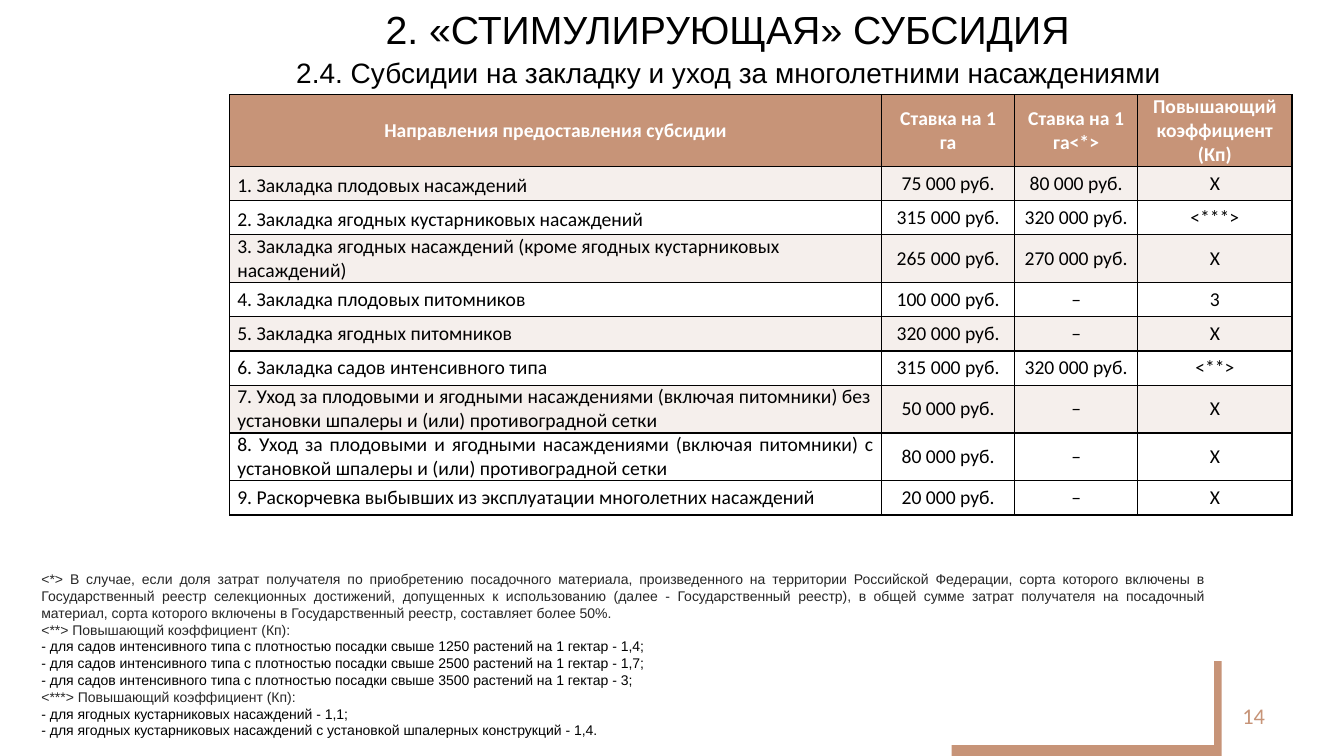
from dataclasses import dataclass
from typing import Any, NamedTuple

from lxml import etree
from pptx import Presentation, util as u
from pptx.dml.color import RGBColor
from pptx.enum import shapes, text
from pptx.oxml import ns

ALIGN = text.PP_ALIGN
MID = text.MSO_ANCHOR.MIDDLE
TOP = text.MSO_ANCHOR.TOP


@dataclass(frozen=True)
class Theme:
    clay: str = "C79478"
    sand: str = "F5EFEC"
    white: str = "FFFFFF"
    black: str = "000000"
    gray: str = "262626"
    head: str = "Arial"
    body: str = "Calibri"
    title: int = 28
    sub: int = 20
    num: int = 16
    cell: int = 14
    note: int = 10


class Box(NamedTuple):
    left: float
    top: float
    width: float
    height: float


class Row(NamedTuple):
    name: str
    rate: str
    local: str
    coef: str
    tall: float = 0.85
    lead: float = 1.0
    align: Any = ALIGN.LEFT


class Note(NamedTuple):
    words: str
    color: str
    align: Any = ALIGN.LEFT


T = Theme()
SLIDE = (33.87, 19.05)
TITLE = Box(8.43, 0, 19.81, 1.45)
SUB = Box(5.26, 1.27, 26.21, 1.12)
GRID = Box(5.79, 2.39, 26.77, 10.41)
NOTES = Box(0.79, 14.25, 29.8, 4.52)
CORNER = Box(23.98, 16.66, 6.81, 2.39)
NUMBER = Box(24.51, 17.53, 7.62, 1.02)
COLS = (16.43, 3.35, 3.1, 3.89)
TALL = 1.19

ROWS = [
    Row("Направления предоставления субсидии", "Ставка на 1 га", "Ставка на 1 га<*>",
        "Повышающий коэффициент (Кп)", 1.79, align=ALIGN.CENTER),
    Row("1. Закладка плодовых насаждений", "75 000 руб.", "80 000 руб.", "Х", lead=1.15),
    Row("2. Закладка ягодных кустарниковых насаждений", "315 000 руб.", "320 000 руб.",
        "<***>", lead=1.15),
    Row("3. Закладка ягодных насаждений (кроме ягодных кустарниковых насаждений)",
        "265 000 руб.", "270 000 руб.", "Х", TALL),
    Row("4. Закладка плодовых питомников", "100 000 руб.", "–", "3"),
    Row("5. Закладка ягодных питомников", "320 000 руб.", "–", "Х"),
    Row("6. Закладка садов интенсивного типа", "315 000 руб.", "320 000 руб.", "<**>"),
    Row("7. Уход за плодовыми и ягодными насаждениями (включая питомники) без установки "
        "шпалеры и (или) противоградной сетки", "50 000 руб.", "–", "Х", TALL),
    Row("8. Уход за плодовыми и ягодными насаждениями (включая питомники) с установкой "
        "шпалеры и (или) противоградной сетки", "80 000 руб.", "–", "Х", TALL,
        align=ALIGN.JUSTIFY),
    Row("9. Раскорчевка выбывших из эксплуатации многолетних насаждений",
        "20 000 руб.", "–", "Х", align=ALIGN.JUSTIFY),
]
FILLS = [T.clay] + [T.sand, T.white] * 4 + [T.white]

LINES = [
    Note("<*> В случае, если доля затрат получателя по приобретению посадочного материала, "
         "произведенного на территории Российской Федерации, сорта которого включены в "
         "Государственный реестр селекционных достижений, допущенных к использованию (далее - "
         "Государственный реестр), в общей сумме затрат получателя на посадочный материал, "
         "сорта которого включены в Государственный реестр, составляет более 50%.",
         T.gray, ALIGN.JUSTIFY),
    Note("<**> Повышающий коэффициент (Кп):", T.gray, ALIGN.JUSTIFY),
    Note("- для садов интенсивного типа с плотностью посадки свыше 1250 растений на 1 гектар - 1,4;",
         T.black),
    Note("- для садов интенсивного типа с плотностью посадки свыше 2500 растений на 1 гектар - 1,7;",
         T.black),
    Note("- для садов интенсивного типа с плотностью посадки свыше 3500 растений на 1 гектар - 3;",
         T.black),
    Note("<***> Повышающий коэффициент (Кп):", T.gray),
    Note("- для ягодных кустарниковых насаждений - 1,1;", T.black),
    Note("- для ягодных кустарниковых насаждений с установкой шпалерных конструкций - 1,4.",
         T.black),
]


def assign(item: Any, form: dict[str, Any]) -> None:
    for key, val in form.items():
        setattr(item, key, val)


def paint(fill: Any, color: str) -> None:
    fill.solid()
    fill.fore_color.rgb = RGBColor.from_string(color)


def place(shape: Any, box: Box) -> None:
    assign(shape, {key: u.Cm(val) for key, val in box._asdict().items()})


def write(para: Any, words: str, size: int, face: str, color: str,
          align: Any = ALIGN.CENTER, bold: bool = False, lead: float = 1.0) -> None:
    para.text = words
    assign(para, {"alignment": align, "line_spacing": lead, "space_before": u.Pt(0)})
    assign(para.font, {"size": u.Pt(size), "name": face, "bold": bold})
    para.font.color.rgb = RGBColor.from_string(color)


def setup(frame: Any, anchor: Any = TOP) -> None:
    assign(frame, {"word_wrap": True, "auto_size": text.MSO_AUTO_SIZE.NONE,
                   "vertical_anchor": anchor})


def label(slide: Any, box: Box, words: str, size: int, face: str, color: str,
          align: Any = ALIGN.CENTER, anchor: Any = TOP) -> None:
    shape = slide.shapes.add_textbox(*map(u.Cm, box))
    setup(shape.text_frame, anchor)
    write(shape.text_frame.paragraphs[0], words, size, face, color, align)


def border(cell: Any) -> None:
    props = cell._tc.get_or_add_tcPr()
    for spot, side in enumerate(("lnL", "lnR", "lnT", "lnB")):
        line = etree.Element(ns.qn("a:" + side), w=str(u.Pt(1)))
        fill = etree.SubElement(line, ns.qn("a:solidFill"))
        etree.SubElement(fill, ns.qn("a:srgbClr"), val=T.black)
        props.insert(spot, line)


def corner(slide: Any) -> None:
    shape = slide.shapes.add_shape(shapes.MSO_SHAPE.RECTANGLE, *map(u.Cm, CORNER))
    shape.shadow.inherit = False
    paint(shape.fill, T.clay)
    shape.line.fill.background()


def notes(slide: Any) -> None:
    body = slide.placeholders[1]
    slide.shapes.element.append(body.element)
    place(body, NOTES)
    paint(body.fill, T.white)
    frame = body.text_frame
    setup(frame)
    for spot, note in enumerate(LINES):
        para = frame.add_paragraph() if spot else frame.paragraphs[0]
        props = para._p.get_or_add_pPr()
        assign_xml = {"marL": "0", "indent": "0"}
        for key, val in assign_xml.items():
            props.set(key, val)
        etree.SubElement(props, ns.qn("a:buNone"))
        write(para, note.words, T.note, T.head, note.color, note.align)


def grid(slide: Any) -> None:
    table = slide.shapes.add_table(len(ROWS), len(COLS), *map(u.Cm, GRID)).table
    for col, width in zip(table.columns, COLS):
        col.width = u.Cm(width)
    for y, (row, fill) in enumerate(zip(ROWS, FILLS)):
        table.rows[y].height = u.Cm(row.tall)
        head = y == 0
        for x, words in enumerate(row[:4]):
            cell = table.cell(y, x)
            name = x == 0
            side = u.Cm(0.19 if name and not head else 0.25)
            edge = u.Cm(0 if name or head else 0.13)
            assign(cell, {"vertical_anchor": MID, "margin_left": side, "margin_right": side,
                          "margin_top": edge, "margin_bottom": edge})
            paint(cell.fill, fill)
            border(cell)
            write(cell.text_frame.paragraphs[0], words, T.cell, T.body,
                  T.white if head else T.black, row.align if name else ALIGN.CENTER,
                  head, row.lead if name else 1.0)


def main() -> None:
    deck = Presentation()
    deck.slide_width, deck.slide_height = map(u.Cm, SLIDE)
    slide = deck.slides.add_slide(deck.slide_layouts[1])
    corner(slide)
    notes(slide)
    label(slide, NUMBER, "14", T.num, T.body, T.clay, ALIGN.RIGHT, MID)
    grid(slide)
    label(slide, SUB, SUBHEAD, T.sub, T.head, T.black)
    title = slide.shapes.title
    place(title, TITLE)
    setup(title.text_frame)
    write(title.text_frame.paragraphs[0], "2. «СТИМУЛИРУЮЩАЯ» СУБСИДИЯ", T.title, T.head, T.black)
    deck.save("out.pptx")


SUBHEAD = "2.4. Субсидии на закладку и уход за многолетними насаждениями"

if __name__ == "__main__":
    main()
